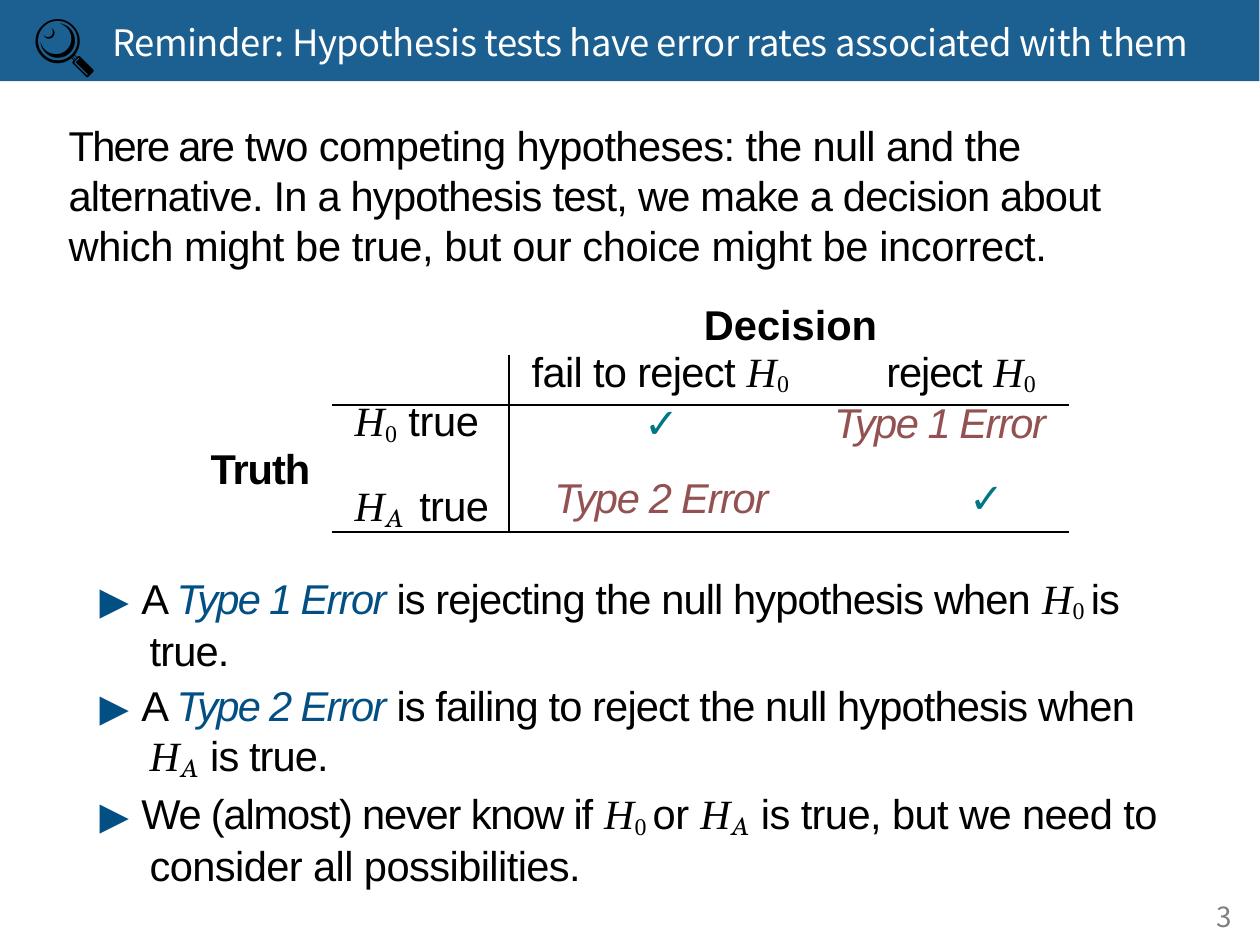
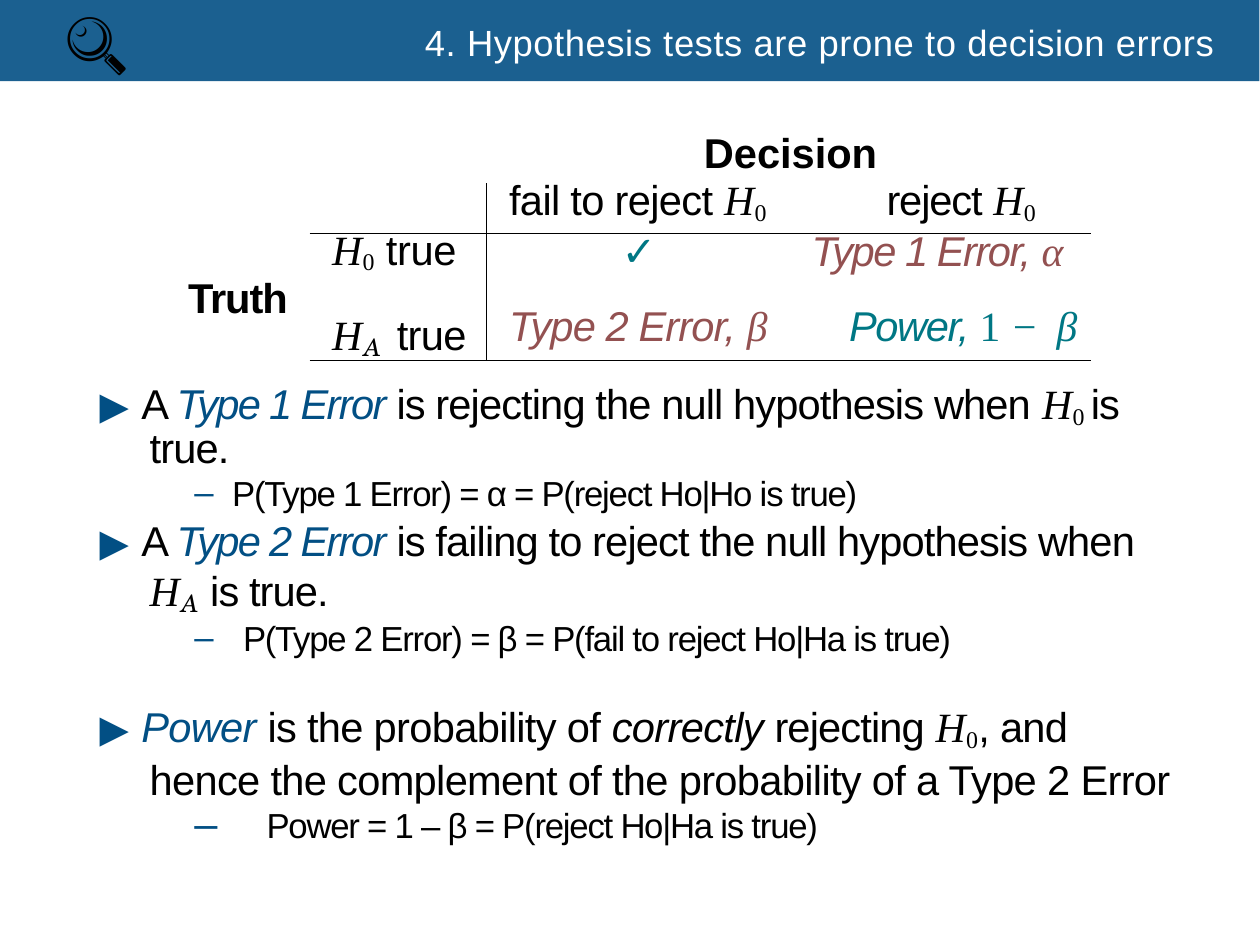
from dataclasses import dataclass, field
from typing import NamedTuple

from lxml import etree
from pptx import Presentation
from pptx.dml.color import RGBColor
from pptx.enum.shapes import MSO_SHAPE
from pptx.oxml.ns import qn
from pptx.util import Pt

RECTANGLE = MSO_SHAPE.RECTANGLE
SLIDE_WIDTH, SLIDE_HEIGHT = 363, 272.5
BAND_WIDTH, BAND_HEIGHT = 362.85, 23.4
HEADER_TOP = 5.8
ROW_HEIGHTS = (14.4, 36.7)
TRUTH_COLUMN = 51
CELL_INDENT = 6.5
CHECK_LEFT, FIRST_ERROR_LEFT = 38.9, 93.6
DASH_LEFT = 28
POINT_MARGIN, POINT_INDENT = 15.1, -14.4
POINTS_LEFT, POINTS_WIDTH = 28, 312

COLORS = {
    "band": "1B6090", "white": "FFFFFF", "black": "000000", "gray": "7F7F7F",
    "blue": "024F84", "red": "935151", "teal": "007784",
}


def look(color: str = "black", name: str = "Arial", size: float = 12,
         italic: bool = False, bold: bool = False, baseline: int = 0) -> dict:
    return {"color": color, "baseline": baseline,
            "font": {"name": name, "size": Pt(size), "italic": italic, "bold": bold}}


MATH = "Times New Roman"
LOOKS = {
    "body": look(),
    "bold": look(bold=True),
    "emphasis": look(italic=True),
    "term": look("blue", italic=True),
    "arrow": look("blue", "DejaVu Sans", 11),
    "error": look("red", italic=True),
    "error_math": look("red", MATH, italic=True),
    "power": look("teal", italic=True),
    "power_math": look("teal", MATH, italic=True),
    "power_number": look("teal", MATH),
    "check": look("teal", "DejaVu Sans"),
    "math": look(name=MATH, italic=True),
    "null_index": look(name=MATH, baseline=-14000),
    "alternative_index": look(name="TeX Gyre Schola", italic=True, baseline=-14000),
    "formula": look(size=10),
    "header_sans": look("white", "Noto Sans CJK JP", 10.5),
    "header": look("white", size=10.5),
    "page": look("gray", "Noto Sans CJK JP", 8),
    "icon": look(name="Calibri", size=18),
}


class Run(NamedTuple):
    text: str
    look: str = "body"
    spacing: float = 0


class Bullet(NamedTuple):
    character: str
    color: str
    font: str
    percent: int = 100


@dataclass
class Paragraph:
    runs: list[Run]
    margin: float = 0
    indent: float = 0
    bullet: Bullet | None = None
    tab: float | None = None
    format: dict = field(default_factory=dict)


DASH = Bullet("–", "blue", "Arial")
LARGE_DASH = Bullet("–", "blue", "Arial", 120)
CHECK = Bullet("✓", "teal", "DejaVu Sans")


def null(tail: str = "") -> list[Run]:
    return [Run("H", "math", 0.1), Run("0" + tail, "null_index")]


def alternative(spacing: float = 0.7) -> list[Run]:
    return [Run("H", "math", 0.5), Run("A ", "alternative_index", spacing)]


def point(runs: list[Run], before: float = 0, line: float | None = None) -> Paragraph:
    values = {"space_before": Pt(before)}
    if line:
        values["line_spacing"] = Pt(line)
    return Paragraph([Run("▶ ", "arrow"), *runs], POINT_MARGIN, POINT_INDENT, format=values)


def formula(text: str, margin: float, bullet: Bullet = DASH) -> Paragraph:
    return Paragraph([Run(text, "formula", -0.33)], margin, DASH_LEFT - margin, bullet,
                     format={"line_spacing": Pt(11.9), "space_before": Pt(0.1)})


def type_one(before: float = 0, line: float | None = None) -> Paragraph:
    return point([Run("A ", spacing=-0.5), Run("Type 1 Error ", "term", -0.48),
                  Run("is rejecting the null hypothesis when ", spacing=-0.25),
                  *null(" "), Run("is true.", spacing=-0.25)], before, line)


def type_two(before: float) -> Paragraph:
    return point([Run("A ", spacing=-0.5), Run("Type 2 Error ", "term", -0.48),
                  Run("is failing to reject the null hypothesis when ", spacing=-0.25),
                  *alternative(), Run("is true.", spacing=-0.25)], before)


def add_element(parent: etree._Element, tag: str, **attributes: str) -> etree._Element:
    element = etree.SubElement(parent, qn(tag))
    for name, value in attributes.items():
        element.set(name, value)
    return element


def fill_text(text_frame, paragraphs: list[Paragraph]) -> None:
    for number, item in enumerate(paragraphs):
        paragraph = text_frame.add_paragraph() if number else text_frame.paragraphs[0]
        for name, value in item.format.items():
            setattr(paragraph, name, value)
        properties = paragraph._p.get_or_add_pPr()
        for name, value in {"marL": item.margin, "indent": item.indent}.items():
            if value:
                properties.set(name, str(int(Pt(value))))
        if item.bullet:
            color = add_element(properties, "a:buClr")
            add_element(color, "a:srgbClr", val=COLORS[item.bullet.color])
            add_element(properties, "a:buSzPct", val=str(item.bullet.percent * 1000))
            add_element(properties, "a:buFont", typeface=item.bullet.font)
            add_element(properties, "a:buChar", char=item.bullet.character)
        if item.tab:
            stops = add_element(properties, "a:tabLst")
            add_element(stops, "a:tab", pos=str(int(Pt(item.tab))), algn="l")
        for part in item.runs:
            style = LOOKS[part.look]
            run = paragraph.add_run()
            run.text = part.text
            for name, value in style["font"].items():
                setattr(run.font, name, value)
            run.font.color.rgb = RGBColor.from_string(COLORS[style["color"]])
            run_properties = run._r.get_or_add_rPr()
            run_properties.set("spc", str(round(part.spacing * 100)))
            if style["baseline"]:
                run_properties.set("baseline", str(style["baseline"]))
        if not item.runs:
            add_element(paragraph._p, "a:endParaRPr", sz="1000")


def add_text(slide, left: float, top: float, width: float, height: float,
             paragraphs: list[Paragraph]) -> None:
    shape = slide.shapes.add_textbox(Pt(left), Pt(top), Pt(width), Pt(height))
    for name, value in {"margin_left": 0, "margin_top": 0, "margin_right": 0,
                        "margin_bottom": 0, "word_wrap": True}.items():
        setattr(shape.text_frame, name, value)
    fill_text(shape.text_frame, paragraphs)


def add_line(slide, left: float, top: float, width: float, run: Run) -> None:
    add_text(slide, left, top, width, 15, [Paragraph([run])])


def add_header(slide, left: float, title: Run, icon_left: float, icon_top: float) -> None:
    band = slide.shapes.add_shape(RECTANGLE, 0, 0, Pt(BAND_WIDTH), Pt(BAND_HEIGHT))
    band.shadow.inherit = False
    band.fill.solid()
    band.fill.fore_color.rgb = RGBColor.from_string(COLORS["band"])
    band.line.fill.background()
    add_line(slide, left, HEADER_TOP, BAND_WIDTH - left, title)
    add_text(slide, icon_left, icon_top, 22, 22, [Paragraph([Run("🔍", "icon")])])


def set_borders(cell, sides: str) -> None:
    properties = cell._tc.get_or_add_tcPr()
    for position, side in enumerate("LRTB"):
        line = etree.Element(qn(f"a:ln{side}"))
        line.set("w", str(int(Pt(0.5))))
        if side in sides:
            fill = add_element(line, "a:solidFill")
            add_element(fill, "a:srgbClr", val=COLORS["black"])
        else:
            add_element(line, "a:noFill")
        properties.insert(position, line)


def add_decision_table(slide, left: float, top: float, width: float, header_tab: float,
                       first_error: list[Run], second_row: Paragraph) -> None:
    add_line(slide, 202.8, top - 16.2, 60, Run("Decision", "bold"))
    add_line(slide, left - 35, top + 25.5, 34, Run("Truth", "bold", -0.3))
    columns = (TRUTH_COLUMN, width)
    table = slide.shapes.add_table(2, 2, Pt(left), Pt(top), Pt(sum(columns)),
                                   Pt(sum(ROW_HEIGHTS))).table
    for name in ("first_row", "horz_banding"):
        setattr(table, name, False)
    for column, size in zip(table.columns, columns):
        column.width = Pt(size)
    for row, size in zip(table.rows, ROW_HEIGHTS):
        row.height = Pt(size)
    true = Run("true", spacing=-0.2)
    header_line, first_line = {"line_spacing": Pt(12.5)}, {"line_spacing": Pt(12.3)}
    second_line = {"space_before": Pt(7.9)}
    second_row.format.update(second_line)
    contents = {
        (0, 0): ("RB", [Paragraph([], format=header_line)]),
        (0, 1): ("LB", [Paragraph(
            [Run("fail to reject ", spacing=-0.19), *null("\t"),
             Run("reject ", spacing=-0.3), *null()],
            CELL_INDENT, tab=header_tab, format=header_line)]),
        (1, 0): ("RTB", [
            Paragraph([*null(), Run(" true", spacing=-0.1)], CELL_INDENT, format=first_line),
            Paragraph([*alternative(1.3), true], CELL_INDENT, format=second_line)]),
        (1, 1): ("LTB", [
            Paragraph(first_error, FIRST_ERROR_LEFT, CHECK_LEFT - FIRST_ERROR_LEFT, CHECK,
                      FIRST_ERROR_LEFT, first_line),
            second_row]),
    }
    for (row, column), (sides, paragraphs) in contents.items():
        cell = table.cell(row, column)
        for name in ("margin_left", "margin_top", "margin_right", "margin_bottom"):
            setattr(cell, name, 0)
        cell.fill.background()
        set_borders(cell, sides)
        fill_text(cell.text_frame, paragraphs)


def build_reminder(slide) -> None:
    add_header(slide, 32.4, Run("Reminder: Hypothesis tests have error rates associated with them",
                                "header_sans", -0.1), 9.8, 1.2)
    add_text(slide, 19.8, 34.5, 302, 44, [Paragraph([
        Run("There are ", spacing=-0.5),
        Run("two competing hypotheses: the null and the ", spacing=-0.16),
        Run("alternative. In a hypothesis test, we make a decision about ", spacing=-0.23),
        Run("which might be true, but our choice might be incorrect.", spacing=-0.1)])])
    add_decision_table(
        slide, 95.7, 102.2, 161.3, 102.2, [Run("Type 1 Error", "error", -0.43)],
        Paragraph([Run("Type 2 Error\t", "error", -0.36), Run("✓", "check")], 13, tab=119.5))
    add_text(slide, POINTS_LEFT, 164.9, POINTS_WIDTH, 90, [
        type_one(),
        type_two(1.6),
        point([Run("We (almost) never know if ", spacing=-0.34), *null(" "),
               Run("or ", spacing=-0.1), *alternative(),
               Run("is true, but we need to consider all possibilities.", spacing=-0.18)], 1.6),
    ])
    add_line(slide, 350.6, 259.2, 10, Run("3", "page", -0.1))


def build_errors(slide) -> None:
    add_header(slide, 122.4, Run("4. Hypothesis tests are prone to decision errors",
                                 "header", 0.21), 19, 0.7)
    add_decision_table(
        slide, 89.2, 52.8, 174.2, 108.7,
        [Run("Type 1 Error, ", "error", -0.43), Run("α", "error_math", 1.1)],
        Paragraph([Run("Type 2 Error, ", "error", -0.25), Run("β\t", "error_math", 0.6),
                   Run("Power, ", "power", -0.4), Run("1 ", "power_number", -0.2),
                   Run("− ", "power_math", 1.1), Run("β", "power_math", 0.6)],
                  CELL_INDENT, tab=97.9))
    add_text(slide, POINTS_LEFT, 112, POINTS_WIDTH, 135, [
        type_one(line=12),
        formula("P(Type 1 Error) = α = P(reject Ho|Ho is true)", 38.9),
        type_two(0.3),
        formula("P(Type 2 Error) = β = P(fail to reject Ho|Ha is true)", 42),
        point([Run("Power ", "term", -0.2), Run("is the probability of ", spacing=-0.2),
               Run("correctly ", "emphasis", -0.2), Run("rejecting ", spacing=-0.25), *null(),
               Run(", and hence the complement of the probability of a Type 2 Error",
                   spacing=-0.21)], 12.2),
        formula("Power = 1 – β = P(reject Ho|Ha is true)", 48.8, LARGE_DASH),
    ])


def main() -> None:
    presentation = Presentation()
    presentation.slide_width = Pt(SLIDE_WIDTH)
    presentation.slide_height = Pt(SLIDE_HEIGHT)
    for build in (build_reminder, build_errors):
        build(presentation.slides.add_slide(presentation.slide_layouts[6]))
    presentation.save("out.pptx")


if __name__ == "__main__":
    main()
